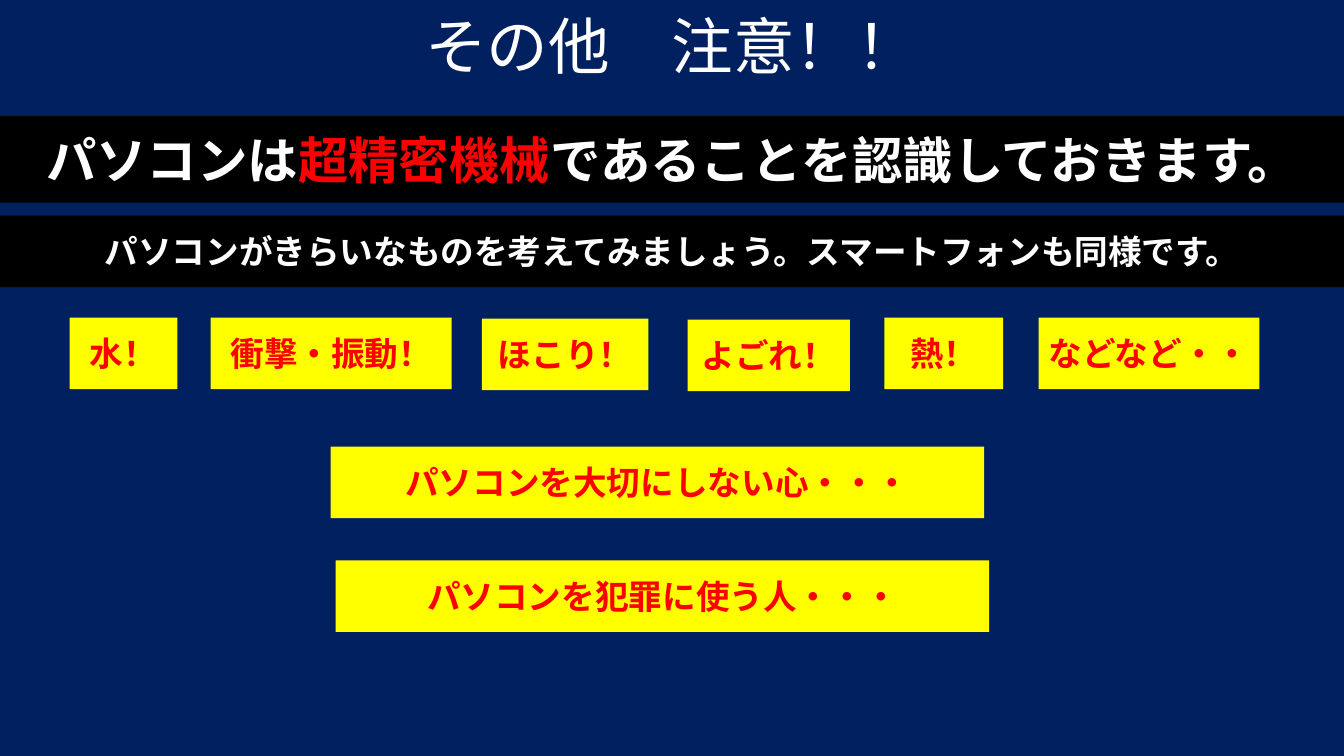
"""Build a slide on what computers dislike and how to treat them with care."""
from dataclasses import dataclass

from pptx import Presentation
from pptx import util as u
from pptx.dml import color
from pptx.enum import shapes, text

HUES = {"navy": "002060", "black": "000000", "white": "FFFFFF",
        "red": "FF0000", "yellow": "FFFF00"}
WIDE, HIGH = 13.33, 7.5
LOW = 0.71


@dataclass
class Bit:
    words: str
    hue: str


@dataclass
class Box:
    left: float
    top: float
    width: float
    bits: list[Bit]
    fill: str
    high: float = LOW
    size: int = 24


def rgb(name: str) -> color.RGBColor:
    return color.RGBColor.from_string(HUES[name])


def write(frame, bits: list[Bit], size: int, face: str, bold: bool):
    frame.word_wrap = True
    frame.vertical_anchor = text.MSO_ANCHOR.MIDDLE
    para = frame.paragraphs[0]
    para.alignment = text.PP_ALIGN.CENTER
    for bit in bits:
        run = para.add_run()
        run.text = bit.words
        font = run.font
        font.size, font.name, font.bold = u.Pt(size), face, bold
        font.color.rgb = rgb(bit.hue)
    return para


def draw(slide, box: Box) -> None:
    area = map(u.Inches, (box.left, box.top, box.width, box.high))
    shape = slide.shapes.add_shape(shapes.MSO_SHAPE.RECTANGLE, *area)
    shape.shadow.inherit = False
    shape.fill.solid()
    shape.fill.fore_color.rgb = rgb(box.fill)
    shape.line.fill.background()
    frame = shape.text_frame
    frame.margin_left = frame.margin_right = u.Inches(0.02)
    frame.margin_top = frame.margin_bottom = u.Inches(0.02)
    write(frame, box.bits, box.size, "Cambria", True)


def title(slide, words: str) -> None:
    area = map(u.Inches, (0, 0, WIDE, 0.99))
    frame = slide.shapes.add_textbox(*area).text_frame
    para = write(frame, [Bit(words, "white")], 44, "Calibri", False)
    para.line_spacing = 0.9


def label(left: float, top: float, width: float, words: str) -> Box:
    return Box(left, top, width, [Bit(words, "red")], "yellow")


BANDS = [
    Box(0, 1.15, WIDE, [Bit("パソコンは", "white"),
                        Bit("超精密機械", "red"),
                        Bit("であることを認識しておきます。", "white")],
        "black", 0.86, 36),
    Box(0, 2.14, WIDE,
        [Bit("パソコンがきらいなものを考えてみましょう。スマートフォンも同様です。",
             "white")], "black"),
]
LABELS = [
    label(0.69, 3.15, 1.07, "水！"),
    label(2.09, 3.15, 2.39, "衝撃・振動！"),
    label(4.78, 3.16, 1.65, "ほこり！"),
    label(6.82, 3.17, 1.61, "よごれ！"),
    label(8.77, 3.15, 1.18, "熱！"),
    label(10.3, 3.15, 2.19, "などなど・・"),
    label(3.28, 4.43, 6.48, "パソコンを大切にしない心・・・"),
    label(3.33, 5.56, 6.48, "パソコンを犯罪に使う人・・・"),
]


def main() -> None:
    deck = Presentation()
    deck.slide_width, deck.slide_height = u.Inches(WIDE), u.Inches(HIGH)
    slide = deck.slides.add_slide(deck.slide_layouts[6])
    slide.background.fill.solid()
    slide.background.fill.fore_color.rgb = rgb("navy")
    title(slide, "その他　注意！！")
    for box in BANDS + LABELS:
        draw(slide, box)
    deck.save("out.pptx")


if __name__ == "__main__":
    main()
